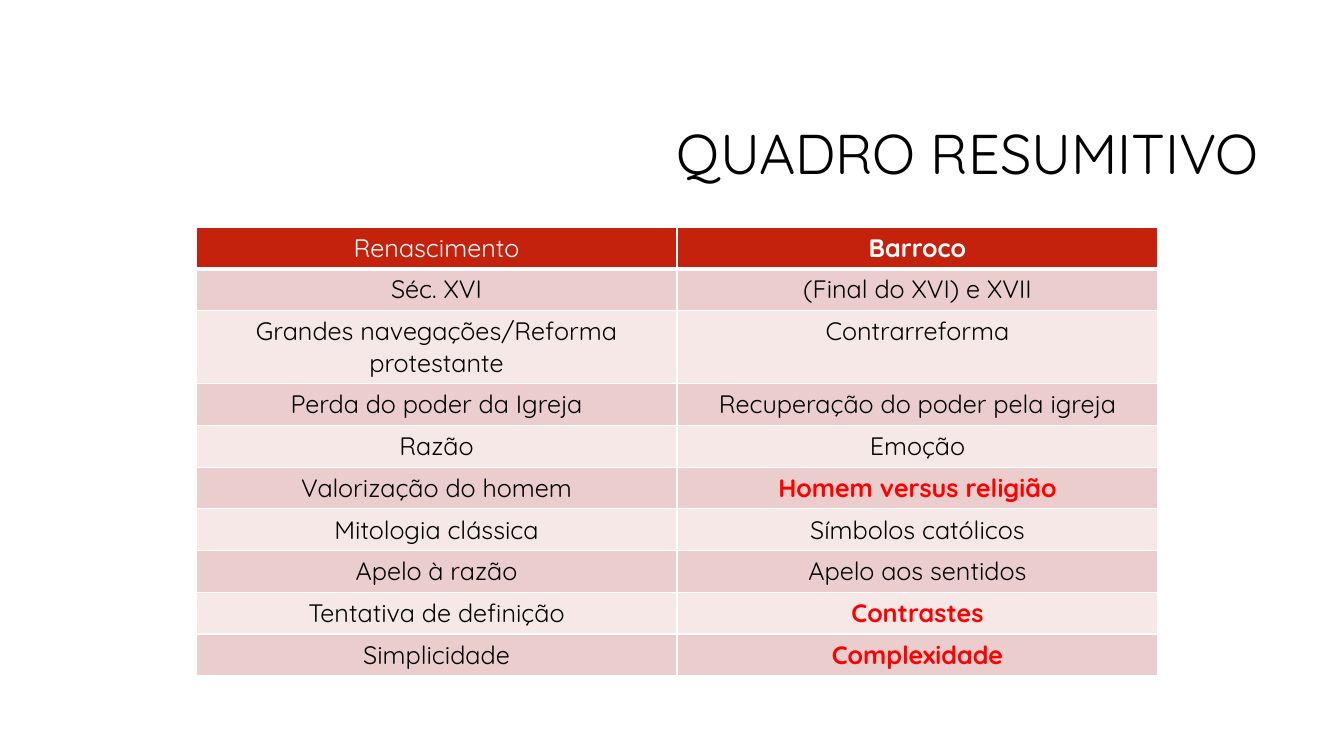
from lxml.etree import SubElement
from pptx import Presentation
from pptx.dml.color import RGBColor
from pptx.enum.text import MSO_ANCHOR, PP_ALIGN
from pptx.oxml.ns import qn
from pptx.util import Pt

TITLE = "QUADRO RESUMITIVO"
PERIODS = ("Renascimento", "Barroco")
CONTRASTS = [
    ("Séc. XVI", "(Final do XVI) e XVII"),
    ("Grandes navegações/Reforma protestante", "Contrarreforma"),
    ("Perda do poder da Igreja", "Recuperação do poder pela igreja"),
    ("Razão", "Emoção"),
    ("Valorização do homem", "Homem versus religião"),
    ("Mitologia clássica", "Símbolos católicos"),
    ("Apelo à razão", "Apelo aos sentidos"),
    ("Tentativa de definição", "Contrastes"),
    ("Simplicidade", "Complexidade"),
]
HIGHLIGHTS = {"Homem versus religião", "Contrastes", "Complexidade"}

FONT = "Quicksand"
BLACK, WHITE, RED = "000000", "FFFFFF", "FF0000"
HEADER_FILL = "C4220D"
BAND_FILLS = ("F5E8E7", "EACDCC")

SLIDE_SIZE = (1344, 756)
TITLE_BOX = (320, 85, 949, 142)
TABLE_LEFT, TABLE_TOP = 196, 227
COLUMN_WIDTH, ROW_HEIGHT = 481, 41


def px(length):
    return round(length * 914400 / 100.8)


def rgb(color):
    return RGBColor.from_string(color)


def write(frame, text, size=18, color=BLACK, bold=False, align=PP_ALIGN.CENTER, spacing=None):
    paragraph = frame.paragraphs[0]
    paragraph.alignment = align
    paragraph.line_spacing = spacing
    run = paragraph.add_run()
    run.text = text
    run.font.name = FONT
    run.font.size = Pt(size)
    run.font.bold = bold
    run.font.color.rgb = rgb(color)


def add_borders(cell, **widths):
    properties = cell._tc.get_or_add_tcPr()
    for side, width in widths.items():
        border = SubElement(properties, qn(f"a:ln{side}"), w=str(Pt(width)))
        fill = SubElement(border, qn("a:solidFill"))
        SubElement(fill, qn("a:srgbClr"), val=WHITE)


deck = Presentation()
deck.slide_width, deck.slide_height = map(px, SLIDE_SIZE)
slide = deck.slides.add_slide(deck.slide_layouts[5])

title = slide.shapes.title
title.left, title.top, title.width, title.height = map(px, TITLE_BOX)
title.text_frame.vertical_anchor = MSO_ANCHOR.MIDDLE
write(title.text_frame, TITLE, size=40, align=PP_ALIGN.RIGHT, spacing=0.9)

rows = [PERIODS, *CONTRASTS]
summary = slide.shapes.add_table(
    len(rows), len(PERIODS), px(TABLE_LEFT), px(TABLE_TOP),
    px(COLUMN_WIDTH * len(PERIODS)), px(ROW_HEIGHT * len(rows)),
).table
for column in summary.columns:
    column.width = px(COLUMN_WIDTH)

for row_index, row in enumerate(rows):
    is_header = row_index == 0
    for column_index, text in enumerate(row):
        cell = summary.cell(row_index, column_index)
        add_borders(cell, L=1, R=1, T=3 if row_index == 1 else 1, B=3 if is_header else 1)
        cell.fill.solid()
        cell.fill.fore_color.rgb = rgb(HEADER_FILL if is_header else BAND_FILLS[row_index % 2])
        highlighted = text in HIGHLIGHTS
        color = WHITE if is_header else RED if highlighted else BLACK
        write(cell.text_frame, text, color=color, bold=highlighted or text == PERIODS[1])

deck.save("out.pptx")
